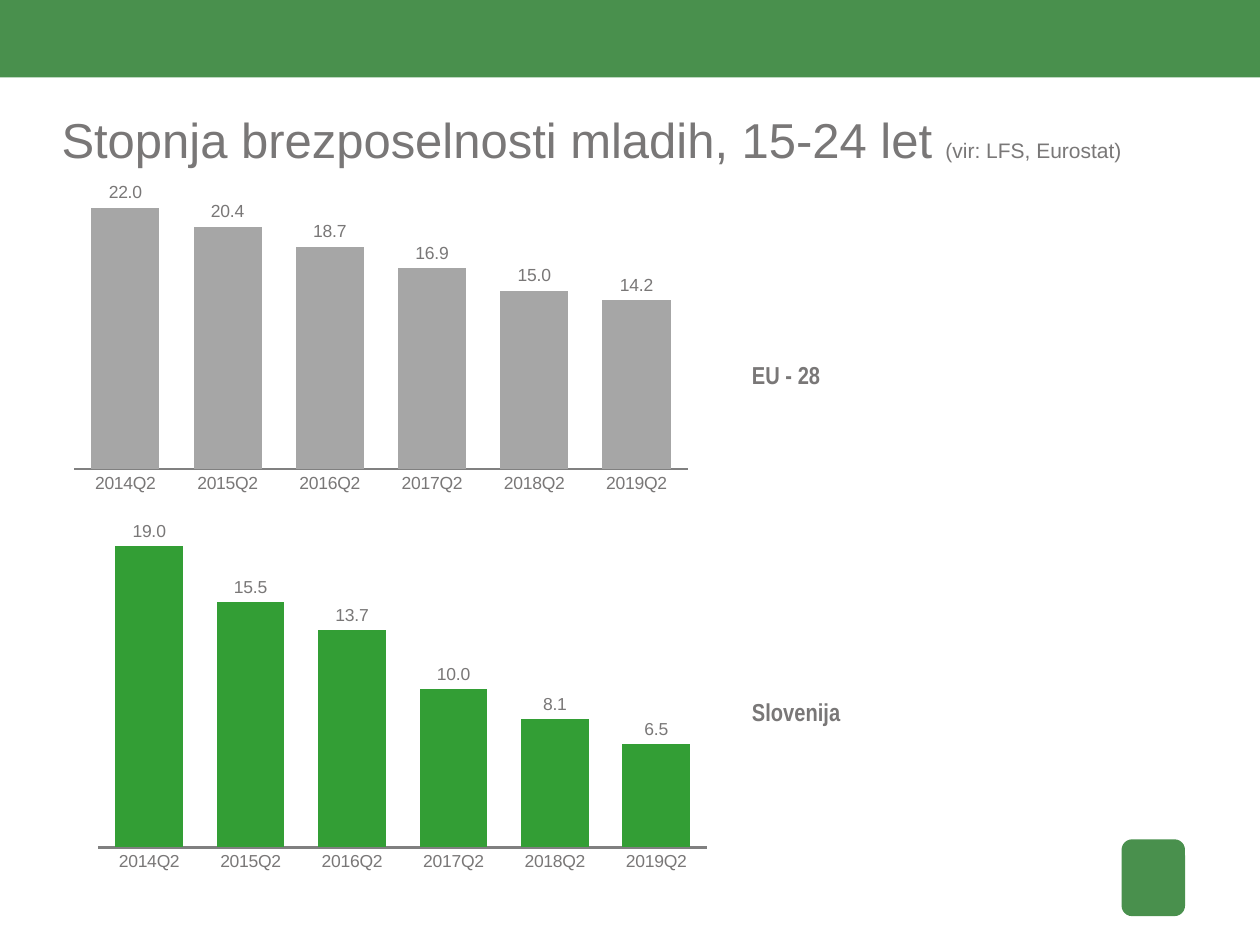
"""Build the slide comparing youth unemployment in the EU and Slovenia."""
from dataclasses import dataclass

import pptx
import pptx.chart.data
import pptx.dml.color
import pptx.enum.chart
import pptx.enum.shapes
import pptx.enum.text
import pptx.oxml
import pptx.oxml.ns
import pptx.util
from pptx.util import Cm

GREEN = pptx.dml.color.RGBColor(0x49, 0x90, 0x4D)
TEXT_GRAY = pptx.dml.color.RGBColor(0x79, 0x77, 0x77)
AXIS_GRAY = pptx.dml.color.RGBColor(0x80, 0x80, 0x80)
EU_GRAY = pptx.dml.color.RGBColor(0xA6, 0xA6, 0xA6)
SLOVENIA_GREEN = pptx.dml.color.RGBColor(0x33, 0x9E, 0x35)
QUARTERS = [f"{year}Q2" for year in range(2014, 2020)]


@dataclass(frozen=True)
class Box:
    left: float
    top: float
    width: float
    height: float

    def lengths(self) -> tuple:
        return Cm(self.left), Cm(self.top), Cm(self.width), Cm(self.height)


@dataclass(frozen=True)
class RateChart:
    region: str
    rates: tuple
    color: pptx.dml.color.RGBColor
    maximum: int
    plot_height: float
    box: Box
    label_box: Box


RATE_CHARTS = (
    RateChart("EU - 28", (22.0, 20.4, 18.7, 16.9, 15.0, 14.2), EU_GRAY, 25, 0.88,
              Box(1.24, 3.33, 12.88, 6.81), Box(14.91, 7.14, 4.29, 0.86)),
    RateChart("Slovenija", (19.0, 15.5, 13.7, 10.0, 8.1, 6.5), SLOVENIA_GREEN, 20, 0.89,
              Box(1.73, 10.52, 12.78, 7.21), Box(14.91, 13.92, 4.29, 0.86)),
)


def write_text(paragraph, text: str, *, size: float, font: str = "Arial", bold: bool = False) -> None:
    run = paragraph.add_run()
    run.text = text
    run.font.size = pptx.util.Pt(size)
    run.font.name = font
    run.font.bold = bold
    run.font.color.rgb = TEXT_GRAY


def add_green_shape(slide, kind, box: Box) -> None:
    shape = slide.shapes.add_shape(kind, *box.lengths())
    shape.shadow.inherit = False
    shape.fill.solid()
    shape.fill.fore_color.rgb = GREEN
    shape.line.fill.background()


def fill_title(slide) -> None:
    title = slide.shapes.title
    title.left, title.top, title.width, title.height = Box(1.24, 2.08, 23.52, 1.8).lengths()
    frame = title.text_frame
    frame.margin_left = frame.margin_right = frame.margin_bottom = 0
    frame.margin_top = Cm(0.12)
    frame.auto_size = pptx.enum.text.MSO_AUTO_SIZE.NONE
    frame.vertical_anchor = pptx.enum.text.MSO_ANCHOR.TOP
    paragraph = frame.paragraphs[0]
    paragraph.alignment = pptx.enum.text.PP_ALIGN.LEFT
    write_text(paragraph, "Stopnja brezposelnosti mladih, 15-24 let ", size=28)
    write_text(paragraph, "(vir: LFS, Eurostat)", size=12)


def set_plot_layout(chart, **fractions: float) -> None:
    plot_area = chart._chartSpace.chart.plotArea
    for layout in plot_area.findall(pptx.oxml.ns.qn("c:layout")):
        plot_area.remove(layout)
    values = "".join(f'<c:{name} val="{value}"/>' for name, value in fractions.items())
    plot_area.insert(0, pptx.oxml.parse_xml(
        f'<c:layout {pptx.oxml.ns.nsdecls("c")}><c:manualLayout>'
        '<c:layoutTarget val="inner"/><c:xMode val="edge"/><c:yMode val="edge"/>'
        f'{values}</c:manualLayout></c:layout>'))


def add_rate_chart(slide, rate_chart: RateChart) -> None:
    data = pptx.chart.data.CategoryChartData(number_format="0.0")
    data.categories = QUARTERS
    data.add_series("Series 1", rate_chart.rates)
    chart = slide.shapes.add_chart(
        pptx.enum.chart.XL_CHART_TYPE.COLUMN_CLUSTERED, *rate_chart.box.lengths(), data).chart
    chart.has_legend = chart.has_title = False
    chart.font.size = pptx.util.Pt(10)
    chart.font.name = "Arial"
    chart.font.color.rgb = TEXT_GRAY

    for axis in (chart.category_axis, chart.value_axis):
        axis.has_major_gridlines = False
        axis.major_tick_mark = axis.minor_tick_mark = pptx.enum.chart.XL_TICK_MARK.NONE
    chart.category_axis.format.line.color.rgb = AXIS_GRAY
    chart.category_axis.format.line.width = pptx.util.Pt(1.5)
    chart.value_axis.minimum_scale = 0
    chart.value_axis.maximum_scale = rate_chart.maximum
    chart.value_axis.tick_label_position = pptx.enum.chart.XL_TICK_LABEL_POSITION.NONE
    chart.value_axis.format.line.fill.background()

    plot = chart.plots[0]
    plot.gap_width = 50
    plot.vary_by_categories = False
    plot.series[0].format.fill.solid()
    plot.series[0].format.fill.fore_color.rgb = rate_chart.color
    labels = plot.series[0].data_labels
    labels.show_value = True
    labels.number_format = "0.0"
    labels.number_format_is_linked = False
    labels.position = pptx.enum.chart.XL_LABEL_POSITION.OUTSIDE_END
    set_plot_layout(chart, x=0.02, y=0.02, w=0.96, h=rate_chart.plot_height)


def add_region_label(slide, rate_chart: RateChart) -> None:
    frame = slide.shapes.add_textbox(*rate_chart.label_box.lengths()).text_frame
    frame.word_wrap = True
    frame.auto_size = pptx.enum.text.MSO_AUTO_SIZE.SHAPE_TO_FIT_TEXT
    write_text(frame.paragraphs[0], rate_chart.region, size=14, font="Arial Narrow", bold=True)


def main() -> None:
    presentation = pptx.Presentation()
    presentation.slide_width, presentation.slide_height = Cm(25.4), Cm(19.05)
    slide = presentation.slides.add_slide(presentation.slide_layouts.get_by_name("Title Only"))
    shapes = pptx.enum.shapes.MSO_SHAPE
    add_green_shape(slide, shapes.RECTANGLE, Box(0, -0.02, 25.4, 1.58))
    add_green_shape(slide, shapes.ROUNDED_RECTANGLE, Box(22.61, 16.92, 1.28, 1.55))
    fill_title(slide)
    for rate_chart in RATE_CHARTS:
        add_region_label(slide, rate_chart)
        add_rate_chart(slide, rate_chart)
    presentation.save("out.pptx")


if __name__ == "__main__":
    main()
